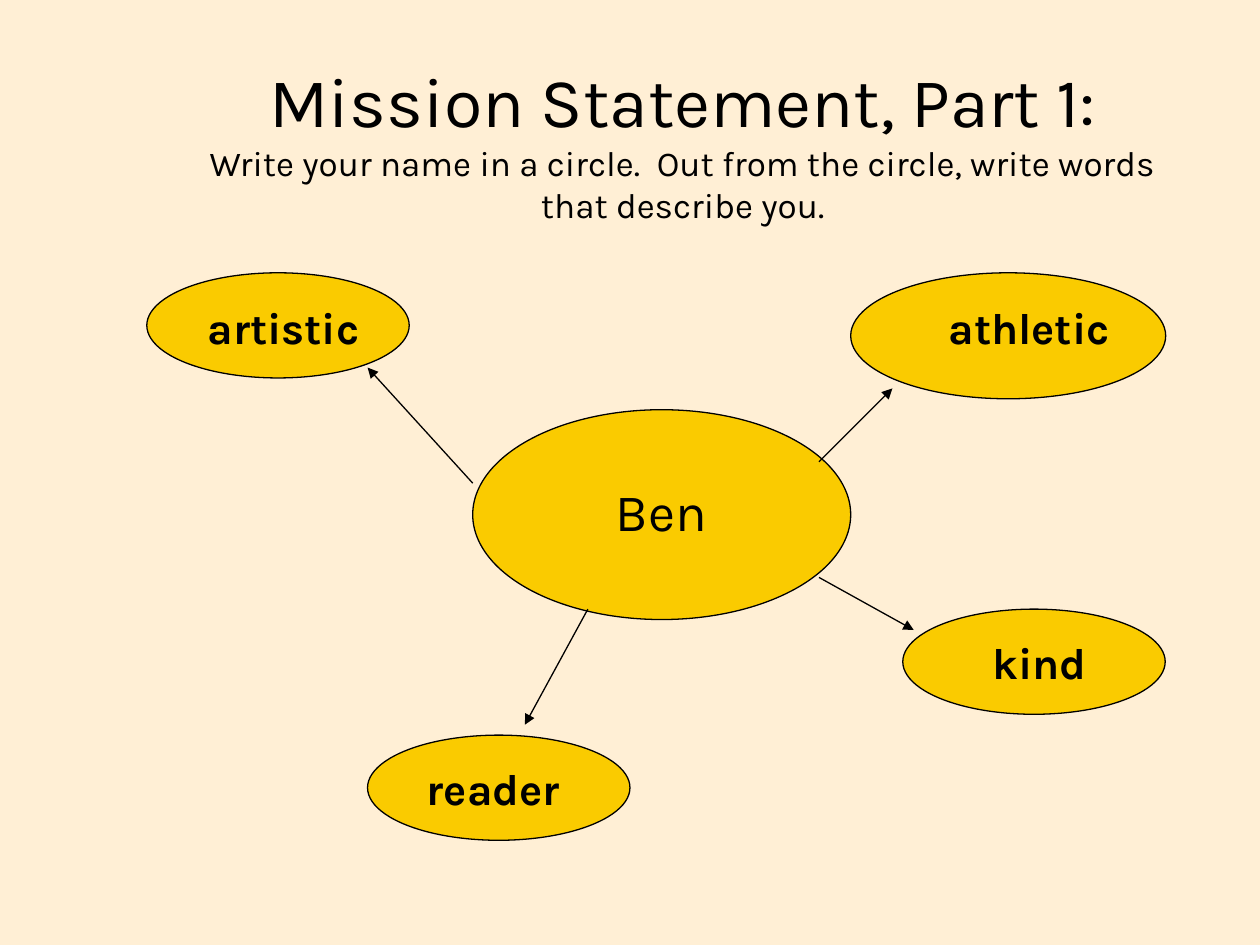
from lxml import etree
from pptx import Presentation
from pptx.dml.color import RGBColor
from pptx.enum.shapes import MSO_CONNECTOR, MSO_SHAPE
from pptx.enum.text import MSO_ANCHOR, MSO_AUTO_SIZE, PP_ALIGN
from pptx.oxml.ns import qn
from pptx.util import Cm, Pt

OVAL = MSO_SHAPE.OVAL
STRAIGHT = MSO_CONNECTOR.STRAIGHT
CENTER = PP_ALIGN.CENTER
MIDDLE = MSO_ANCHOR.MIDDLE
FIXED = MSO_AUTO_SIZE.NONE
GROW = MSO_AUTO_SIZE.SHAPE_TO_FIT_TEXT

CREAM = RGBColor(0xFF, 0xEF, 0xD5)
GOLD = RGBColor(0xFA, 0xCB, 0x00)
BLACK = RGBColor(0x00, 0x00, 0x00)

TITLE = "Mission Statement, Part 1:"
TASK = "Write your name in a circle.  Out from the circle, write words that describe you."
WORDS = [
    ("athletic", (17.15, 5.5, 6.35, 2.54), (18.63, 5.93, 4.23, 1.32)),
    ("kind", (18.2, 12.28, 5.29, 2.12), (19.05, 12.7, 3.81, 1.32)),
    ("artistic", (2.96, 5.5, 5.29, 2.12), (3.81, 5.93, 3.81, 1.32)),
    ("reader", (7.41, 14.82, 5.29, 2.12), (8.04, 15.24, 3.81, 1.32)),
]
ARROWS = [
    (11.85, 12.28, 10.58, 14.61),
    (16.51, 9.31, 17.99, 7.83),
    (16.51, 11.64, 18.42, 12.7),
    (9.53, 9.74, 7.41, 7.41),
]


class MindMap:
    """Holds the style and the page, and draws each kind of element."""

    font_name = "Karla"
    line_width = Pt(0.75)

    def __init__(self, page):
        self.page = page
        page.background.fill.solid()
        page.background.fill.fore_color.rgb = CREAM

    def style_text(self, para, size, bold=False):
        para.alignment = CENTER
        font = para.font
        font.name, font.size, font.bold = self.font_name, Pt(size), bold
        font.color.rgb = BLACK

    def style_line(self, line):
        line.color.rgb = BLACK
        line.width = self.line_width

    def title(self, heading, task, place):
        box = self.page.shapes.title
        box.left, box.top, box.width, box.height = map(Cm, place)
        frame = box.text_frame
        frame.auto_size = FIXED
        frame.vertical_anchor = MIDDLE
        para = frame.paragraphs[0]
        self.style_text(para, 40)
        para.add_run().text = heading
        para.add_line_break()
        span = para.add_run()
        span.text = task
        span.font.size = Pt(20)

    def oval(self, place):
        shape = self.page.shapes.add_shape(OVAL, *map(Cm, place))
        shape.shadow.inherit = False
        shape.fill.solid()
        shape.fill.fore_color.rgb = GOLD
        self.style_line(shape.line)

    def label(self, text, place, size, bold):
        frame = self.page.shapes.add_textbox(*map(Cm, place)).text_frame
        frame.word_wrap = True
        frame.auto_size = GROW
        frame.text = text
        self.style_text(frame.paragraphs[0], size, bold)

    def arrow(self, ends):
        connector = self.page.shapes.add_connector(STRAIGHT, *map(Cm, ends))
        self.style_line(connector.line)
        outline = connector.line._get_or_add_ln()
        etree.SubElement(outline, qn("a:tailEnd"), type="triangle")
        etree.SubElement(connector._element.spPr, qn("a:effectLst"))


def main():
    deck = Presentation()
    deck.slide_width, deck.slide_height = Cm(25.4), Cm(19.05)
    mind_map = MindMap(deck.slides.add_slide(deck.slide_layouts[5]))
    mind_map.title(TITLE, TASK, (3.39, 1.27, 20.75, 3.18))
    mind_map.oval((9.53, 8.26, 7.62, 4.23))
    mind_map.label("Ben", (10.37, 9.53, 5.93, 1.52), 30, False)
    for word, oval_place, label_place in WORDS:
        mind_map.oval(oval_place)
        mind_map.label(word, label_place, 25, True)
    for ends in ARROWS:
        mind_map.arrow(ends)
    deck.save("out.pptx")


if __name__ == "__main__":
    main()
